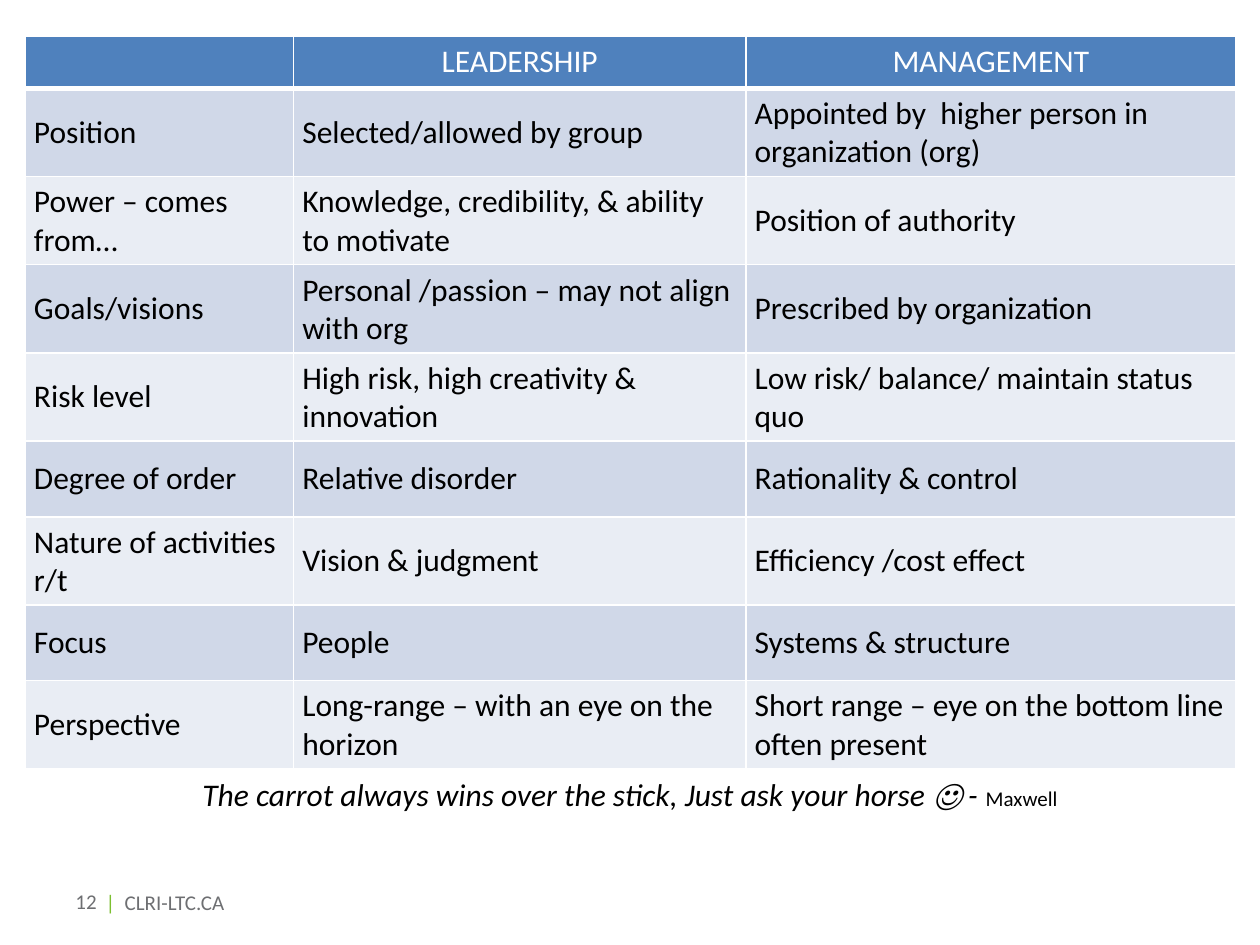
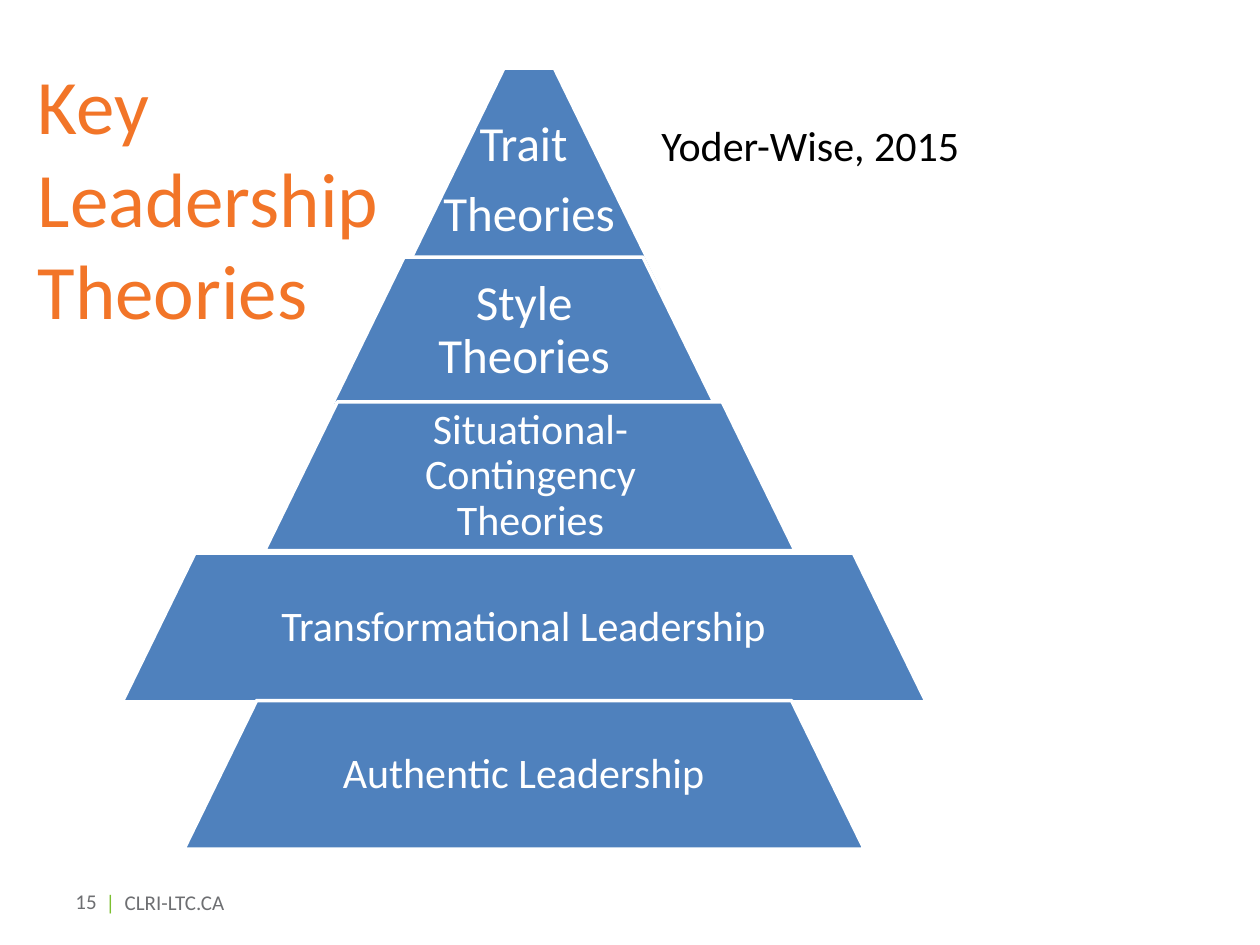
import pptx
import pptx.util
import pptx.dml.color
import pptx.enum.shapes
import pptx.enum.text
import pptx.oxml
import pptx.oxml.ns
import lxml.etree
from dataclasses import dataclass

Inches = pptx.util.Inches
Pt = pptx.util.Pt
ALIGN = pptx.enum.text.PP_ALIGN
ANCHOR = pptx.enum.text.MSO_ANCHOR


@dataclass(frozen=True)
class Theme:
    font: str = "Calibri"
    blue: str = "4F81BD"
    bands: tuple = ("D0D8E8", "E9EDF4")
    white: str = "FFFFFF"
    black: str = "000000"
    orange: str = "F27528"
    gray: str = "6E6F72"
    green: str = "7CBF30"
    title_size: int = 44
    large_size: int = 28
    label_size: int = 24
    table_size: int = 18
    small_size: int = 12


THEME = Theme()

COMPARISON = [
    ("", "LEADERSHIP", "MANAGEMENT"),
    ("Position", "Selected/allowed by group",
     "Appointed by  higher person in organization (org)"),
    ("Power – comes from…", "Knowledge, credibility, & ability to motivate",
     "Position of authority"),
    ("Goals/visions", "Personal /passion – may not align with org",
     "Prescribed by organization"),
    ("Risk level", "High risk, high creativity & innovation",
     "Low risk/ balance/ maintain status quo"),
    ("Degree of order", "Relative disorder", "Rationality & control"),
    ("Nature of activities r/t", "Vision & judgment", "Efficiency /cost effect"),
    ("Focus", "People", "Systems & structure"),
    ("Perspective", "Long-range – with an eye on the horizon",
     "Short range – eye on the bottom line often present"),
]

# Each tier: paragraphs, text size, left, top, width, height, text left, text width
TIERS = [
    (("Trait ", "Theories"), THEME.large_size, 3.13, 0.54, 2.14, 1.78, 3.13, 2.14),
    (("Style Theories",), THEME.large_size, 2.63, 2.04, 3.05, 1.18, 3.17, 1.98),
    (("Situational-Contingency Theories",), THEME.label_size,
     2.1, 3.19, 4.21, 1.18, 2.84, 2.74),
    (("Transformational Leadership",), THEME.label_size,
     0.97, 4.39, 6.38, 1.18, 2.08, 4.15),
    (("Authentic Leadership",), THEME.label_size,
     1.46, 5.56, 5.4, 1.18, 2.4, 3.51),
]


def rgb(color):
    return pptx.dml.color.RGBColor.from_string(color)


def add_run(paragraph, text, size, color, italic=False):
    run = paragraph.add_run()
    run.text = text
    run.font.name = THEME.font
    run.font.size = Pt(size)
    run.font.bold = False
    run.font.italic = italic
    run.font.color.rgb = rgb(color)


def add_text_box(slide, left, top, width, height, wrap=True, margin=None,
                 anchor=ANCHOR.TOP):
    box = slide.shapes.add_textbox(
        Inches(left), Inches(top), Inches(width), Inches(height))
    frame = box.text_frame
    frame.word_wrap = wrap
    frame.vertical_anchor = anchor
    if margin is not None:
        frame.margin_left = frame.margin_right = Inches(margin)
        frame.margin_top = frame.margin_bottom = Inches(margin)
    return frame


def add_footer(slide, number):
    number_frame = add_text_box(slide, 0.5, 6.95, 0.85, 0.4, anchor=ANCHOR.MIDDLE)
    add_run(number_frame.paragraphs[0], number, THEME.small_size, THEME.gray)
    paragraph = add_text_box(slide, 0.74, 7.01, 3.03, 0.3).paragraphs[0]
    add_run(paragraph, "|", THEME.small_size, THEME.green)
    add_run(paragraph, "  CLRI-LTC.CA", THEME.small_size, THEME.gray)


def set_borders(cell, bottom_width):
    properties = cell._tc.get_or_add_tcPr()
    widths = {"lnL": 1, "lnR": 1, "lnT": 1, "lnB": bottom_width}
    for index, (tag, width) in enumerate(widths.items()):
        line = lxml.etree.Element(pptx.oxml.ns.qn("a:" + tag), w=str(Pt(width)))
        fill = lxml.etree.SubElement(line, pptx.oxml.ns.qn("a:solidFill"))
        lxml.etree.SubElement(fill, pptx.oxml.ns.qn("a:srgbClr"), val=THEME.white)
        properties.insert(index, line)


def fill_cell(cell, text, header, fill_color):
    cell.fill.solid()
    cell.fill.fore_color.rgb = rgb(fill_color)
    cell.margin_left = cell.margin_right = Inches(0.07)
    cell.margin_top = cell.margin_bottom = Inches(0.05)
    cell.vertical_anchor = ANCHOR.TOP if header else ANCHOR.MIDDLE
    set_borders(cell, 3 if header else 1)
    paragraph = cell.text_frame.paragraphs[0]
    paragraph.alignment = ALIGN.CENTER if header else ALIGN.LEFT
    if text:
        add_run(paragraph, text, THEME.table_size,
                THEME.white if header else THEME.black)


def add_comparison_table(slide, rows):
    column_widths = (2.13, 3.59, 3.89)
    table = slide.shapes.add_table(
        len(rows), len(column_widths), Inches(0.2), Inches(0.29),
        Inches(sum(column_widths)), Inches(5.21)).table
    for column, width in zip(table.columns, column_widths):
        column.width = Inches(width)
    for row_index, texts in enumerate(rows):
        header = row_index == 0
        table.rows[row_index].height = Inches(0.41 if header else 0.6)
        color = THEME.blue if header else THEME.bands[(row_index - 1) % 2]
        for column_index, text in enumerate(texts):
            fill_cell(table.cell(row_index, column_index), text, header, color)


def add_tier(slide, texts, size, left, top, width, height, text_left, text_width):
    shape = slide.shapes.add_shape(
        pptx.enum.shapes.MSO_SHAPE.TRAPEZOID,
        Inches(left), Inches(top), Inches(width), Inches(height))
    shape.adjustments[0] = 0.489
    shape.shadow.inherit = False
    shape.fill.solid()
    shape.fill.fore_color.rgb = rgb(THEME.blue)
    shape.line.color.rgb = rgb(THEME.white)
    shape.line.width = Pt(2)

    # The label is wider than the trapezoid's own text area
    frame = add_text_box(slide, text_left, top, text_width, height,
                         margin=0.03, anchor=ANCHOR.MIDDLE)
    for index, text in enumerate(texts):
        paragraph = frame.add_paragraph() if index else frame.paragraphs[0]
        paragraph.alignment = ALIGN.CENTER
        paragraph.line_spacing = 0.9
        paragraph.space_after = Pt(0.35 * size)
        add_run(paragraph, text, size, THEME.white)


def set_title(slide, text, left, top, width, height):
    title = slide.shapes.title
    title.left, title.top = Inches(left), Inches(top)
    title.width, title.height = Inches(width), Inches(height)
    frame = title.text_frame
    frame.word_wrap = True
    frame.auto_size = pptx.enum.text.MSO_AUTO_SIZE.NONE
    frame.vertical_anchor = ANCHOR.TOP
    paragraph = frame.paragraphs[0]
    paragraph.alignment = ALIGN.LEFT
    add_run(paragraph, text, THEME.title_size, THEME.orange)


def build_comparison_slide(presentation):
    slide = presentation.slides.add_slide(presentation.slide_layouts[6])
    add_footer(slide, "12")
    add_comparison_table(slide, COMPARISON)
    # Closing quotation
    paragraph = add_text_box(slide, 0, 6.1, 10, 0.4).paragraphs[0]
    paragraph.alignment = ALIGN.CENTER
    add_run(paragraph,
            "The carrot always wins over the stick, Just ask your horse ☺ - ",
            THEME.table_size, THEME.black, italic=True)
    add_run(paragraph, "Maxwell", THEME.small_size, THEME.black)


def build_theories_slide(presentation):
    slide = presentation.slides.add_slide(presentation.slide_layouts[5])
    add_footer(slide, "15")
    set_title(slide, "Key Leadership Theories", 0.2, 0.41, 2.98, 2.32)
    for tier in TIERS:
        add_tier(slide, *tier)
    # Citation
    paragraph = add_text_box(slide, 5.15, 0.9, 2.6, 0.5, wrap=False).paragraphs[0]
    add_run(paragraph, "Yoder-Wise, 2015", THEME.label_size, THEME.black)


def main():
    presentation = pptx.Presentation()
    presentation.slide_width = Inches(10)
    presentation.slide_height = Inches(7.5)
    build_comparison_slide(presentation)
    build_theories_slide(presentation)
    presentation.save("out.pptx")


if __name__ == "__main__":
    main()
